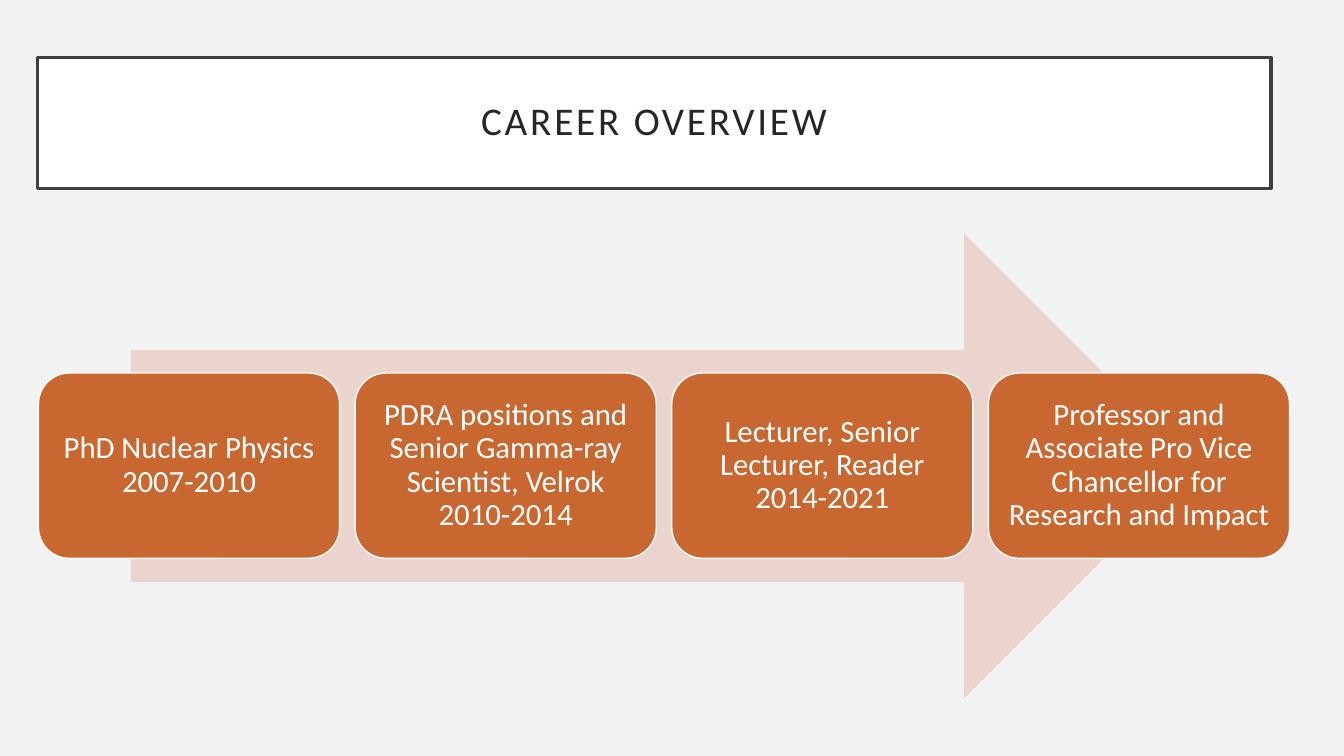
from pptx import Presentation
from pptx import util as u
from pptx.dml.color import RGBColor
from pptx.enum import shapes, text

STEPS = [
    "PhD Nuclear Physics 2007-2010",
    "PDRA positions and Senior Gamma-ray Scientist, Velrok 2010-2014",
    "Lecturer, Senior Lecturer, Reader 2014-2021",
    "Professor and Associate Pro Vice Chancellor for Research and Impact",
]
STEP_LEFT, STEP_PITCH = 0.97, 7.98


def rgb(value):
    """Turn a hex string into a colour."""
    return RGBColor.from_string(value)


def paint(sp, fill, line=None, width=1):
    """Set the fill and outline of a shape."""
    sp.fill.solid()
    sp.fill.fore_color.rgb = rgb(fill)
    if line:
        sp.line.color.rgb = rgb(line)
        sp.line.width = u.Pt(width)
    else:
        sp.line.fill.background()


def write(sp, words, size, color, inset):
    """Put centred text into a shape and return its run."""
    tf = sp.text_frame
    tf.text = words
    tf.word_wrap = True
    tf.auto_size = text.MSO_AUTO_SIZE.NONE
    tf.vertical_anchor = text.MSO_ANCHOR.MIDDLE
    tf.margin_left = tf.margin_right = u.Cm(inset)
    tf.margin_top = tf.margin_bottom = u.Cm(inset)
    p = tf.paragraphs[0]
    p.alignment = text.PP_ALIGN.CENTER
    p.line_spacing = 0.9
    r = p.runs[0]
    r.font.name = "Calibri"
    r.font.size = u.Pt(size)
    r.font.color.rgb = rgb(color)
    return r


def add_title(s, words):
    """Format the title placeholder as a framed banner."""
    sp = s.shapes.title
    sp.left, sp.top, sp.width, sp.height = map(u.Cm, (0.94, 1.45, 31.09, 3.3))
    paint(sp, "FFFFFF", "404040", 2.5)
    r = write(sp, words, 28, "262626", 0.5)
    r.font._element.set("spc", "200")


def add_block(s, kind, left, top, width, height):
    """Add a preset shape without a shadow."""
    sp = s.shapes.add_shape(kind, *map(u.Cm, (left, top, width, height)))
    sp.shadow.inherit = False
    return sp


def add_step(s, index, words):
    """Add one career step at its place along the arrow."""
    left = STEP_LEFT + index * STEP_PITCH
    sp = add_block(s, shapes.MSO_SHAPE.ROUNDED_RECTANGLE, left, 9.4, 7.59, 4.67)
    paint(sp, "C96731", "FFFFFF")
    write(sp, words, 22, "FFFFFF", 0.23)


def main():
    """Build the career overview slide."""
    prs = Presentation()
    prs.slide_width, prs.slide_height = u.Cm(33.87), u.Cm(19.05)
    s = prs.slides.add_slide(prs.slide_layouts[5])
    s.background.fill.solid()
    s.background.fill.fore_color.rgb = rgb("F2F2F2")
    add_title(s, "CAREER OVERVIEW")
    arrow = add_block(s, shapes.MSO_SHAPE.RIGHT_ARROW, 3.3, 5.89, 26.85, 11.71)
    paint(arrow, "EBD3CE")
    for index, words in enumerate(STEPS):
        add_step(s, index, words)
    prs.save("out.pptx")


if __name__ == "__main__":
    main()
